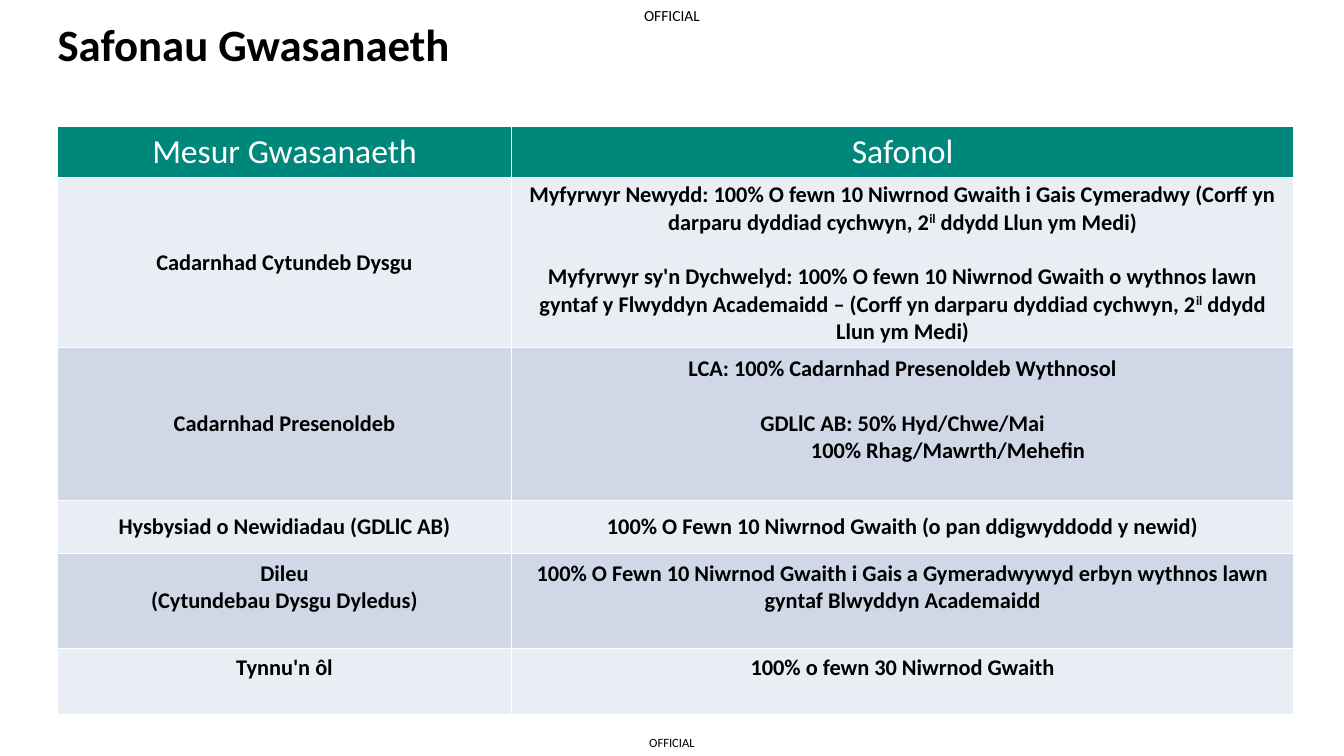
from lxml import etree
from pptx import Presentation
from pptx.dml.color import RGBColor
from pptx.enum import text
from pptx.oxml import ns
from pptx.util import Pt

BLACK = RGBColor(0, 0, 0)
WHITE = RGBColor(255, 255, 255)
TEAL = RGBColor(0x00, 0x87, 0x7C)
BANDS = [RGBColor(0xE9, 0xED, 0xF4), RGBColor(0xD0, 0xD8, 0xE8)]

LINE = 19.5    # height of one 16 pt line
INDENT = 65
COLUMNS = [324.5, 558.5]
HEADINGS = ["Mesur Gwasanaeth", "Safonol"]

# Row height, room kept below the text, then the paragraphs of each cell.
# A paragraph is its text, space before and left indent; ^ encloses superscript.
STANDARDS = [
    (121, 0, [("Cadarnhad Cytundeb Dysgu", 0, 0)],
     [("Myfyrwyr Newydd: 100% O fewn 10 Niwrnod Gwaith i Gais Cymeradwy "
       "(Corff yn darparu dyddiad cychwyn, 2^il^ ddydd Llun ym Medi)", 0, 0),
      ("Myfyrwyr sy'n Dychwelyd: 100% O fewn 10 Niwrnod Gwaith o wythnos lawn "
       "gyntaf y Flwyddyn Academaidd – (Corff yn darparu dyddiad cychwyn, "
       "2^il^ ddydd Llun ym Medi)", LINE, 0)]),
    (109.5, LINE, [("Cadarnhad Presenoldeb", 0, 0)],
     [("LCA: 100% Cadarnhad Presenoldeb Wythnosol", 0, 0),
      ("GDLlC AB: 50% Hyd/Chwe/Mai", LINE, 0),
      ("100% Rhag/Mawrth/Mehefin", 0, INDENT)]),
    (38, 0, [("Hysbysiad o Newidiadau (GDLlC AB)", 0, 0)],
     [("100% O Fewn 10 Niwrnod Gwaith (o pan ddigwyddodd y newid)", 0, 0)]),
    (67.5, LINE, [("Dileu", 0, 0), ("(Cytundebau Dysgu Dyledus)", 0, 0)],
     [("100% O Fewn 10 Niwrnod Gwaith i Gais a Gymeradwywyd erbyn wythnos lawn "
       "gyntaf Blwyddyn Academaidd", 0, 0)]),
    (47.5, LINE, [("Tynnu'n ôl", 0, 0)],
     [("100% o fewn 30 Niwrnod Gwaith", 0, 0)]),
]


def set_all(target, **values):
    for name, value in values.items():
        setattr(target, name, value)


def write(para, words, size, color=BLACK, bold=False):
    """Fill a paragraph, raising every piece enclosed in ^."""
    for number, piece in enumerate(words.split("^")):
        span = para.add_run()
        span.text = piece
        set_all(span.font, name="Calibri", size=Pt(size), bold=bold)
        span.font.color.rgb = color
        if number % 2:
            span._r.get_or_add_rPr().set("baseline", "30000")


def add_label(page, area, words, size, bold=False, centred=False):
    box = page.shapes.add_textbox(*map(Pt, area))
    frame = box.text_frame
    set_all(frame, word_wrap=False, auto_size=text.MSO_AUTO_SIZE.SHAPE_TO_FIT_TEXT)
    para = frame.paragraphs[0]
    if centred:
        set_all(frame, margin_left=0, margin_right=0, margin_top=0, margin_bottom=0,
                vertical_anchor=text.MSO_ANCHOR.MIDDLE)
        para.alignment = text.PP_ALIGN.CENTER
    write(para, words, size, bold=bold)


def add_borders(cell):
    properties = cell._tc.get_or_add_tcPr()
    for position, side in enumerate(("lnL", "lnR", "lnT", "lnB")):
        line = etree.Element(ns.qn("a:" + side), w=str(Pt(1)))
        fill = etree.SubElement(line, ns.qn("a:solidFill"))
        etree.SubElement(fill, ns.qn("a:srgbClr"), val=str(WHITE))
        properties.insert(position, line)


def fill_cell(cell, paragraphs, fill, room=0, **style):
    set_all(cell, vertical_anchor=text.MSO_ANCHOR.MIDDLE, margin_left=Pt(5),
            margin_right=Pt(5), margin_top=Pt(2.7), margin_bottom=Pt(2.7 + room))
    cell.fill.solid()
    cell.fill.fore_color.rgb = fill
    add_borders(cell)
    frame = cell.text_frame
    for number, (words, before, indent) in enumerate(paragraphs):
        para = frame.add_paragraph() if number else frame.paragraphs[0]
        para.alignment = text.PP_ALIGN.CENTER
        if before:
            para.space_before = Pt(before)
        if indent:
            para._p.get_or_add_pPr().set("marL", str(Pt(indent)))
        write(para, words, **style)


def add_standards(page, left, top):
    heights = [36.5] + [row[0] for row in STANDARDS]
    table = page.shapes.add_table(len(heights), len(COLUMNS), Pt(left), Pt(top),
                                  Pt(sum(COLUMNS)), Pt(sum(heights))).table
    table.horz_banding = False
    for column, width in zip(table.columns, COLUMNS):
        column.width = Pt(width)
    for row, height in zip(table.rows, heights):
        row.height = Pt(height)

    # Heading row
    for column, heading in enumerate(HEADINGS):
        fill_cell(table.cell(0, column), [(heading, 0, 0)], TEAL, size=24, color=WHITE)

    # One row for each measure; only text that sits high keeps room below
    for number, (_, room, measure, standard) in enumerate(STANDARDS):
        fill = BANDS[number % 2]
        measure_room = 0 if number == 1 else room
        fill_cell(table.cell(number + 1, 0), measure, fill, measure_room, size=16, bold=True)
        fill_cell(table.cell(number + 1, 1), standard, fill, room, size=16, bold=True)


def main():
    deck = Presentation()
    set_all(deck, slide_width=Pt(960), slide_height=Pt(540))
    page = deck.slides.add_slide(deck.slide_layouts[6])

    # Classification marks
    add_label(page, (453.5, 520.5, 53, 19.5), "OFFICIAL", 9, centred=True)
    add_label(page, (448.5, 0, 63, 22.5), "OFFICIAL", 11, centred=True)

    # Title and table
    add_label(page, (34, 8.5, 317, 46), "Safonau Gwasanaeth", 32, bold=True)
    add_standards(page, 41, 90.5)
    deck.save("out.pptx")


if __name__ == "__main__":
    main()
